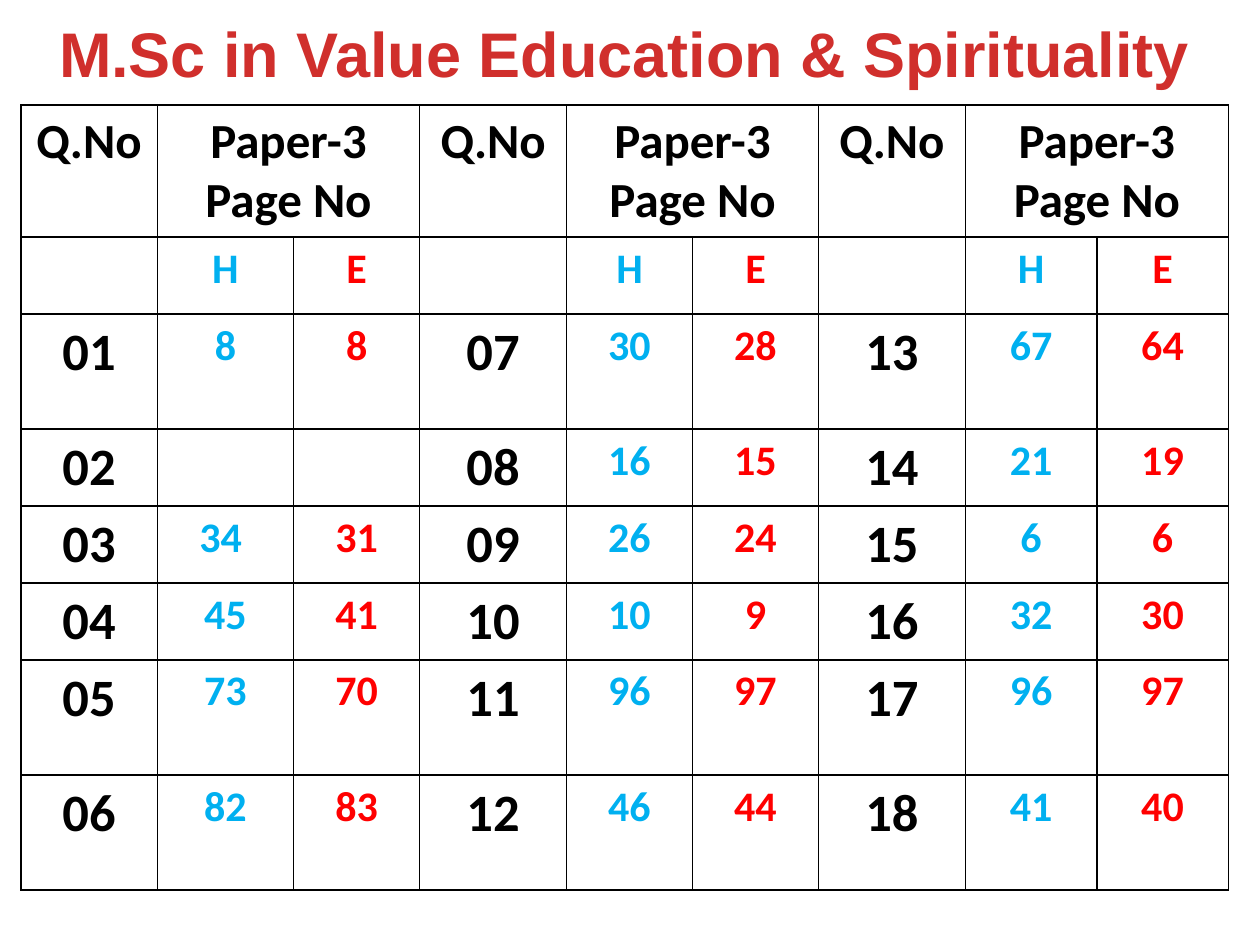
"""Build the Paper-3 page-number index slide for M.Sc in Value Education & Spirituality."""
from lxml import etree
from pptx import Presentation
from pptx import util as u
from pptx.dml.color import RGBColor
from pptx.enum import text
from pptx.oxml.ns import qn

BLACK = RGBColor(0x00, 0x00, 0x00)
BLUE = RGBColor(0x00, 0xB0, 0xF0)
RED = RGBColor(0xFF, 0x00, 0x00)
CRIMSON = RGBColor(0xD0, 0x2F, 0x2C)

COLUMN_WIDTHS = [2.75, 2.75, 2.54, 2.96, 2.54, 2.54, 2.96, 2.65, 2.65]
ROW_HEIGHTS = [2.66, 1.55, 2.32, 1.55, 1.55, 1.55, 2.32, 2.32]
PAGES = [
    [("8", "8"), ("", ""), ("34 ", "31"), ("45", "41"), ("73", "70"), ("82", "83")],
    [("30", "28"), ("16", "15"), ("26", "24"), ("10", "9"), ("96", "97"), ("46", "44")],
    [("67", "64"), ("21", "19"), ("6", "6"), ("32", "30"), ("96", "97"), ("41", "40")],
]


def write(frame, wording, size, color, font="Calibri"):
    frame.text = wording
    for line in frame.paragraphs:
        line.alignment = text.PP_ALIGN.CENTER
        line.font.name = font
        line.font.size = u.Pt(size)
        line.font.bold = True
        line.font.color.rgb = color


def outline(cell):
    properties = cell._tc.get_or_add_tcPr()
    for side in ("a:lnL", "a:lnR", "a:lnT", "a:lnB"):
        border = etree.SubElement(properties, qn(side), w=str(u.Pt(1)))
        fill = etree.SubElement(border, qn("a:solidFill"))
        etree.SubElement(fill, qn("a:srgbClr"), val=str(BLACK))


deck = Presentation()
deck.slide_width, deck.slide_height = u.Cm(25.4), u.Cm(19.05)
slide = deck.slides.add_slide(deck.slide_layouts[6])

title = slide.shapes.add_textbox(u.Cm(0.42), u.Cm(0.42), u.Cm(24.34), u.Cm(1.27)).text_frame
title.word_wrap = True
title.vertical_anchor = text.MSO_ANCHOR.MIDDLE
write(title, "M.Sc in Value Education & Spirituality", 36, CRIMSON, "Arial")

index = slide.shapes.add_table(
    len(ROW_HEIGHTS), len(COLUMN_WIDTHS), u.Cm(0.42), u.Cm(2.12),
    u.Cm(sum(COLUMN_WIDTHS)), u.Cm(sum(ROW_HEIGHTS)),
).table
index.first_row = index.horz_banding = False
for column, width in zip(index.columns, COLUMN_WIDTHS):
    column.width = u.Cm(width)
for row, height in zip(index.rows, ROW_HEIGHTS):
    row.height = u.Cm(height)
for cell in index.iter_cells():
    outline(cell)
    cell.fill.background()

for group, pages in enumerate(PAGES):
    left = 3 * group
    index.cell(0, left + 1).merge(index.cell(0, left + 2))
    write(index.cell(0, left).text_frame, "Q.No", 28, BLACK)
    write(index.cell(0, left + 1).text_frame, "Paper-3\nPage No", 28, BLACK)
    for row, (hindi, english) in enumerate([("H", "E")] + pages, start=1):
        if row > 1:
            question = len(pages) * group + row - 1
            write(index.cell(row, left).text_frame, f"{question:02}", 30, BLACK)
        write(index.cell(row, left + 1).text_frame, hindi, 24, BLUE)
        write(index.cell(row, left + 2).text_frame, english, 24, RED)

deck.save("out.pptx")
